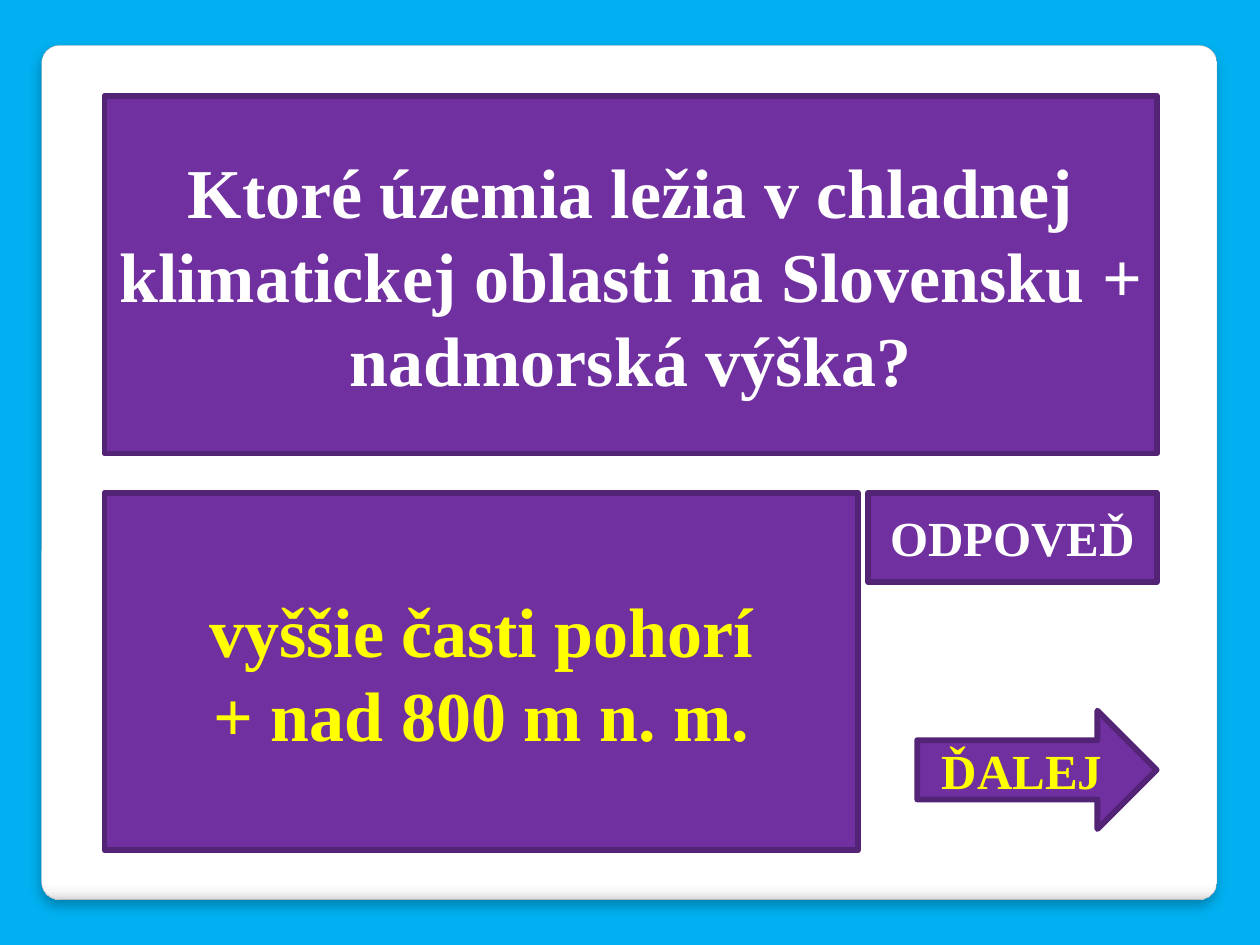
from dataclasses import dataclass

from lxml import etree
from pptx import Presentation
from pptx.dml.color import RGBColor
from pptx.enum.shapes import MSO_SHAPE
from pptx.enum.text import MSO_ANCHOR, PP_ALIGN
from pptx.oxml.ns import qn
from pptx.shapes.autoshape import Shape
from pptx.slide import Slide
from pptx.util import Inches, Pt

RECTANGLE = MSO_SHAPE.RECTANGLE
ROUNDED = MSO_SHAPE.ROUNDED_RECTANGLE
ARROW = MSO_SHAPE.RIGHT_ARROW
CENTER = PP_ALIGN.CENTER
MIDDLE = MSO_ANCHOR.MIDDLE

FONT = "Times New Roman"
SKY, PURPLE, DARK_PURPLE = "00B0F0", "7030A0", "532476"
WHITE, YELLOW, GREY = "FFFFFF", "FFFF00", "A4A4A4"
PANEL_STOPS = ((0, WHITE), (98, WHITE), (99, "F7F7F7"), (100, "DADADA"))

LEFT, RIGHT = 0.83, 9.18
QUESTION_TOP, ANSWER_TOP = 0.76, 3.91
CARD_HEIGHT = 2.84


@dataclass(frozen=True)
class Card:
    """A purple quiz card with its bold centred lines."""

    left: float
    top: float
    width: float
    height: float
    lines: tuple[str, ...]
    size: int
    color: str
    preset: MSO_SHAPE = RECTANGLE


CARDS = (
    Card(LEFT, QUESTION_TOP, RIGHT - LEFT, CARD_HEIGHT,
         ("Ktoré územia ležia v chladnej klimatickej oblasti na Slovensku + nadmorská výška?",),
         40, WHITE),
    Card(LEFT, ANSWER_TOP, 5.98, CARD_HEIGHT,
         ("vyššie časti pohorí", "+ nad 800 m n. m."), 40, YELLOW),
    Card(6.89, ANSWER_TOP, RIGHT - 6.89, 0.71, ("ODPOVEĎ",), 28, WHITE),
    Card(7.28, 5.64, RIGHT - 7.28, 0.94, ("ĎALEJ",), 28, YELLOW, ARROW),
)


def rgb(code: str) -> RGBColor:
    """Turn a hex string into a colour."""
    return RGBColor.from_string(code)


def add_outlined(slide: Slide, preset: MSO_SHAPE, box: tuple[float, ...],
                 line_color: str, line_width: float) -> Shape:
    """Add a preset shape with an outline and no inherited shadow."""
    shape = slide.shapes.add_shape(preset, *(Inches(length) for length in box))
    shape.shadow.inherit = False
    shape.line.color.rgb = rgb(line_color)
    shape.line.width = Pt(line_width)
    return shape


def add_panel(slide: Slide) -> None:
    """Draw the white rounded panel with its shaded foot and soft shadow."""
    panel = add_outlined(slide, ROUNDED, (0.33, 0.36, 9.33, 6.78), GREY, 0.16)
    panel.adjustments[0] = 0.021
    panel.fill.gradient()
    panel.fill.gradient_angle = 270
    properties = panel.element.spPr
    stops = properties.find(f"{qn('a:gradFill')}/{qn('a:gsLst')}")
    for stop in list(stops):
        stops.remove(stop)
    for percent, color in PANEL_STOPS:
        stop = etree.SubElement(stops, qn("a:gs"), pos=str(percent * 1000))
        etree.SubElement(stop, qn("a:srgbClr"), val=color)
    shadow = etree.SubElement(
        properties.find(qn("a:effectLst")), qn("a:outerShdw"),
        blurRad=str(Pt(6)), dist=str(Pt(4)), dir="5400000", algn="t", rotWithShape="0")
    black = etree.SubElement(shadow, qn("a:srgbClr"), val="000000")
    etree.SubElement(black, qn("a:alpha"), val="25000")


def add_card(slide: Slide, card: Card) -> None:
    """Draw a quiz card and write its lines."""
    box = (card.left, card.top, card.width, card.height)
    shape = add_outlined(slide, card.preset, box, DARK_PURPLE, 3.35)
    etree.SubElement(shape.element.spPr.find(qn("a:ln")), qn("a:round"))
    shape.fill.solid()
    shape.fill.fore_color.rgb = rgb(PURPLE)
    frame = shape.text_frame
    frame.word_wrap = True
    frame.vertical_anchor = MIDDLE
    for index, line in enumerate(card.lines):
        paragraph = frame.add_paragraph() if index else frame.paragraphs[0]
        paragraph.alignment = CENTER
        run = paragraph.add_run()
        run.text = line
        run.font.name = FONT
        run.font.size = Pt(card.size)
        run.font.bold = True
        run.font.color.rgb = rgb(card.color)


def main() -> None:
    """Build the quiz slide and save it."""
    deck = Presentation()
    deck.slide_width, deck.slide_height = Inches(10), Inches(7.5)
    slide = deck.slides.add_slide(deck.slide_layouts[6])
    slide.background.fill.solid()
    slide.background.fill.fore_color.rgb = rgb(SKY)
    add_panel(slide)
    for card in CARDS:
        add_card(slide, card)
    deck.save("out.pptx")


if __name__ == "__main__":
    main()
